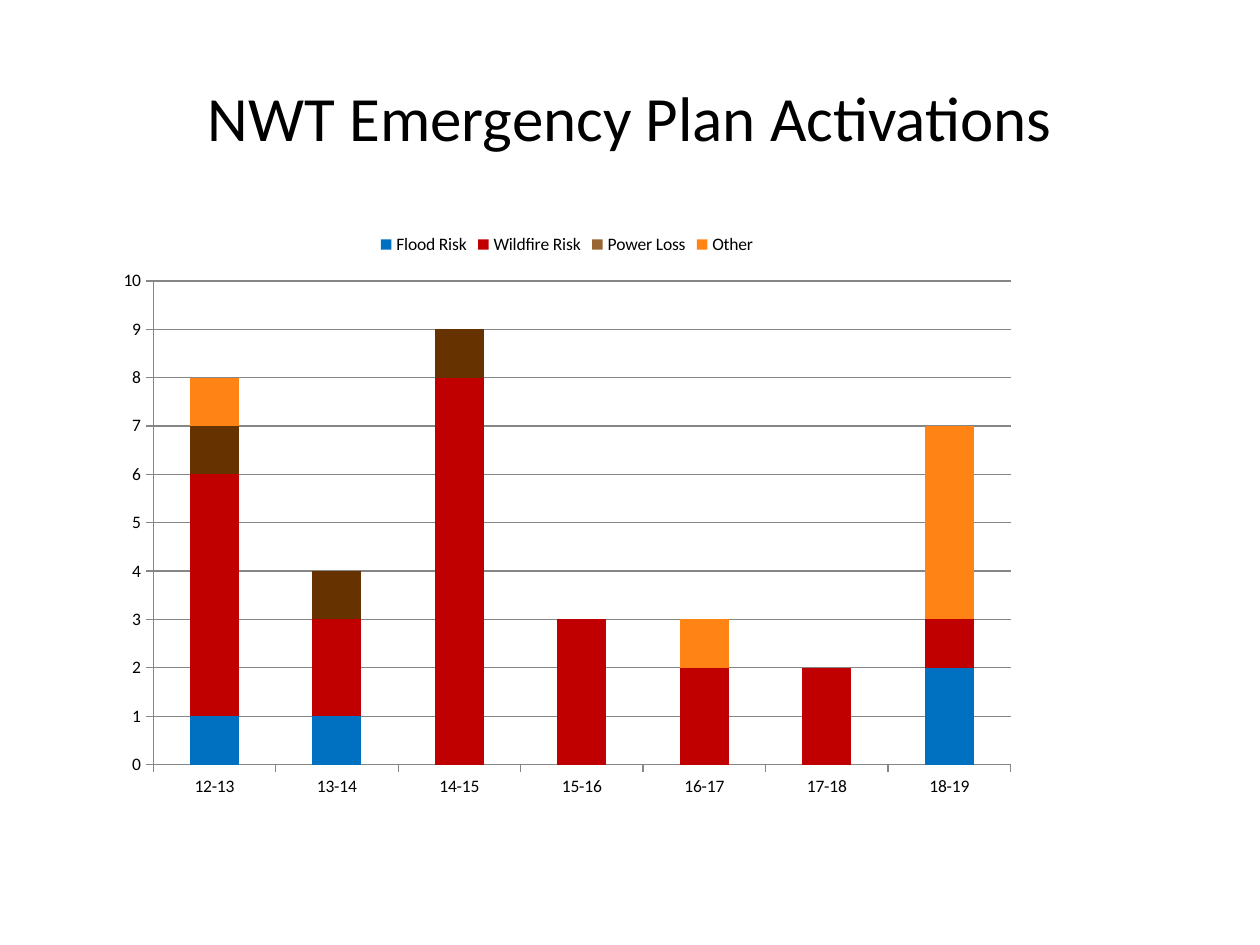
from pptx import Presentation
from pptx.chart.data import CategoryChartData
from pptx.dml.color import RGBColor
from pptx.enum.chart import XL_CHART_TYPE, XL_LEGEND_POSITION, XL_TICK_MARK
from pptx.enum.text import MSO_ANCHOR, PP_ALIGN
from pptx.util import Inches, Pt

FONT = "Calibri"
BLACK = RGBColor(0x00, 0x00, 0x00)
GREY = RGBColor(0x86, 0x86, 0x86)
BLUE = RGBColor(0x00, 0x70, 0xC0)
RED = RGBColor(0xC0, 0x00, 0x00)
BROWN = RGBColor(0x99, 0x66, 0x33)
DARK_BROWN = RGBColor(0x66, 0x33, 0x00)
ORANGE = RGBColor(0xFF, 0x84, 0x15)

YEARS = ["12-13", "13-14", "14-15", "15-16", "16-17", "17-18", "18-19"]
RISKS = [
    ("Flood Risk", (1, 1, 0, 0, 0, 0, 2), BLUE),
    ("Wildfire Risk", (5, 2, 8, 3, 2, 2, 1), RED),
    ("Power Loss", (1, 1, 1, 0, 0, 0, 0), BROWN),
    ("Other", (1, 0, 0, 0, 1, 0, 4), ORANGE),
]
POWER_LOSS = 2


def set_font(font, size):
    font.name = FONT
    font.size = Pt(size)
    font.color.rgb = BLACK


def fill_solid(part, color):
    part.format.fill.solid()
    part.format.fill.fore_color.rgb = color


def add_title(slide, box):
    frame = slide.shapes.add_textbox(*box).text_frame
    frame.word_wrap = True
    frame.vertical_anchor = MSO_ANCHOR.MIDDLE
    frame.text = "NWT Emergency Plan Activations"
    heading = frame.paragraphs[0]
    heading.alignment = PP_ALIGN.CENTER
    set_font(heading.runs[0].font, 36)


def style_axis(axis):
    axis.major_tick_mark = XL_TICK_MARK.OUTSIDE
    axis.minor_tick_mark = XL_TICK_MARK.NONE
    axis.format.line.color.rgb = GREY
    axis.format.line.width = Pt(0.75)
    set_font(axis.tick_labels.font, 10)


def add_activations(slide, box):
    activations = CategoryChartData()
    activations.categories = YEARS
    for name, counts, _ in RISKS:
        activations.add_series(name, counts)
    chart = slide.shapes.add_chart(
        XL_CHART_TYPE.COLUMN_STACKED, *box, activations
    ).chart
    set_font(chart.font, 10)
    chart.has_title = False
    chart.has_legend = True
    chart.legend.position = XL_LEGEND_POSITION.TOP
    chart.legend.include_in_layout = False
    set_font(chart.legend.font, 10)

    style_axis(chart.category_axis)
    count_axis = chart.value_axis
    style_axis(count_axis)
    count_axis.minimum_scale = 0
    count_axis.maximum_scale = 10
    count_axis.major_unit = 1
    count_axis.has_major_gridlines = True
    count_axis.major_gridlines.format.line.color.rgb = GREY
    count_axis.major_gridlines.format.line.width = Pt(0.75)

    stack = chart.plots[0]
    stack.gap_width = 150
    stack.overlap = 100
    stack.vary_by_categories = False
    for series, (_, _, color) in zip(stack.series, RISKS):
        series.invert_if_negative = False
        fill_solid(series, color)
    for year, count in enumerate(RISKS[POWER_LOSS][1]):
        if count:
            fill_solid(stack.series[POWER_LOSS].points[year], DARK_BROWN)


def main():
    deck = Presentation()
    deck.slide_width, deck.slide_height = Inches(10), Inches(7.5)
    column, row = deck.slide_width / 120, deck.slide_height / 90

    def cell(left, top, width, height):
        return (round(left * column), round(top * row),
                round(width * column), round(height * row))

    slide = deck.slides.add_slide(deck.slide_layouts[6])
    add_title(slide, cell(6, 3.6, 108, 15))
    add_activations(slide, cell(10, 21, 88, 56))
    deck.save("out.pptx")


if __name__ == "__main__":
    main()
